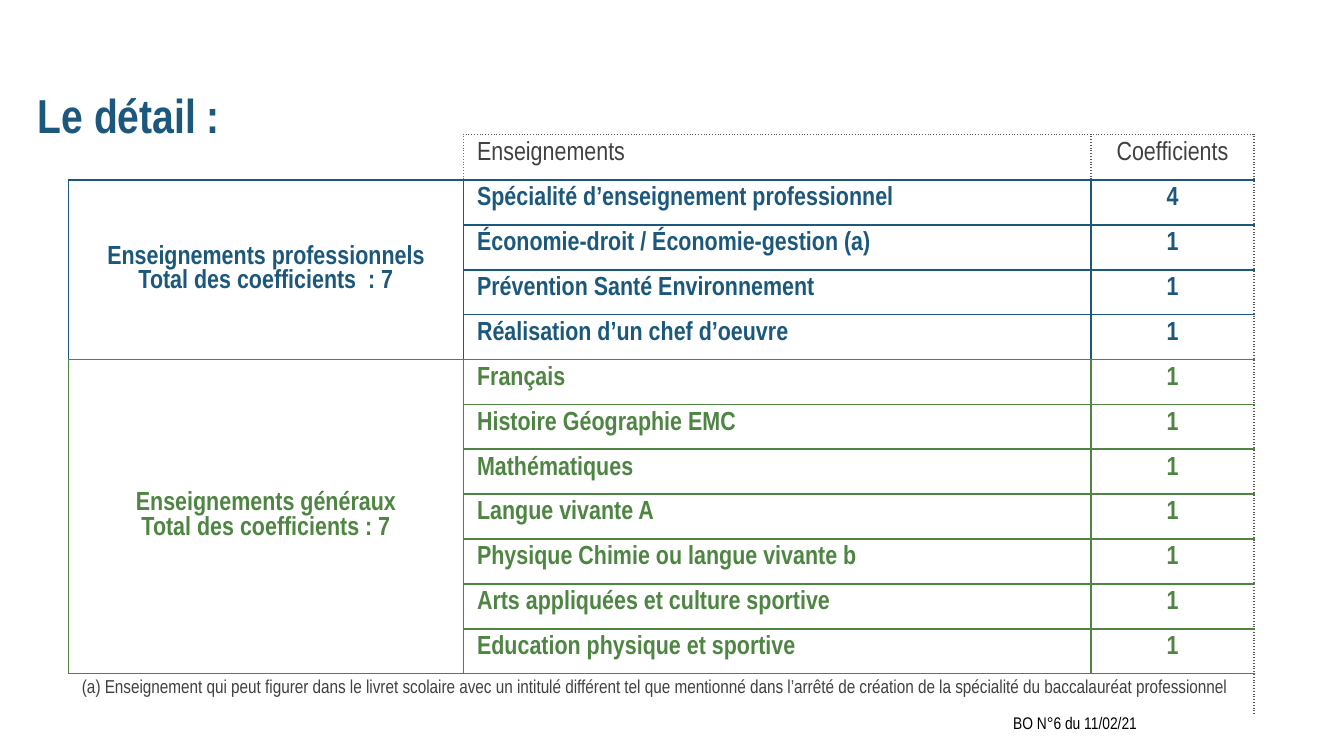
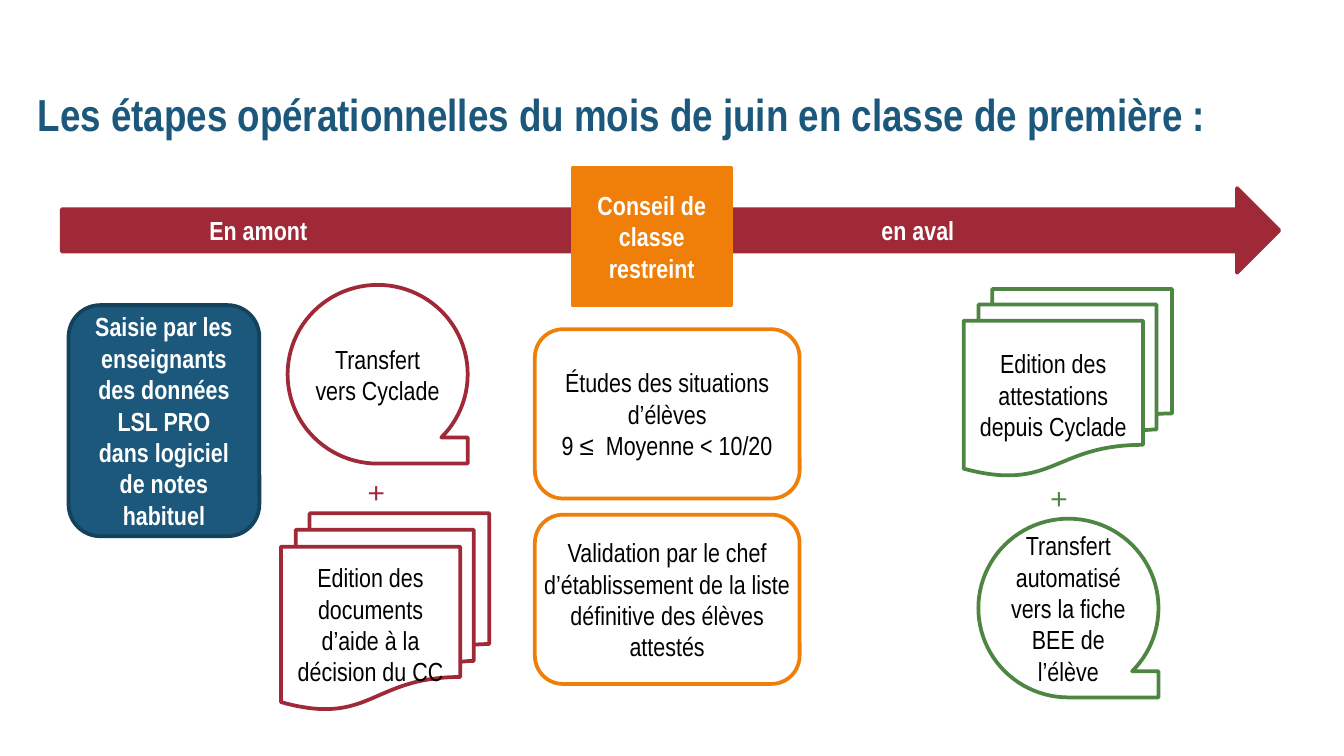
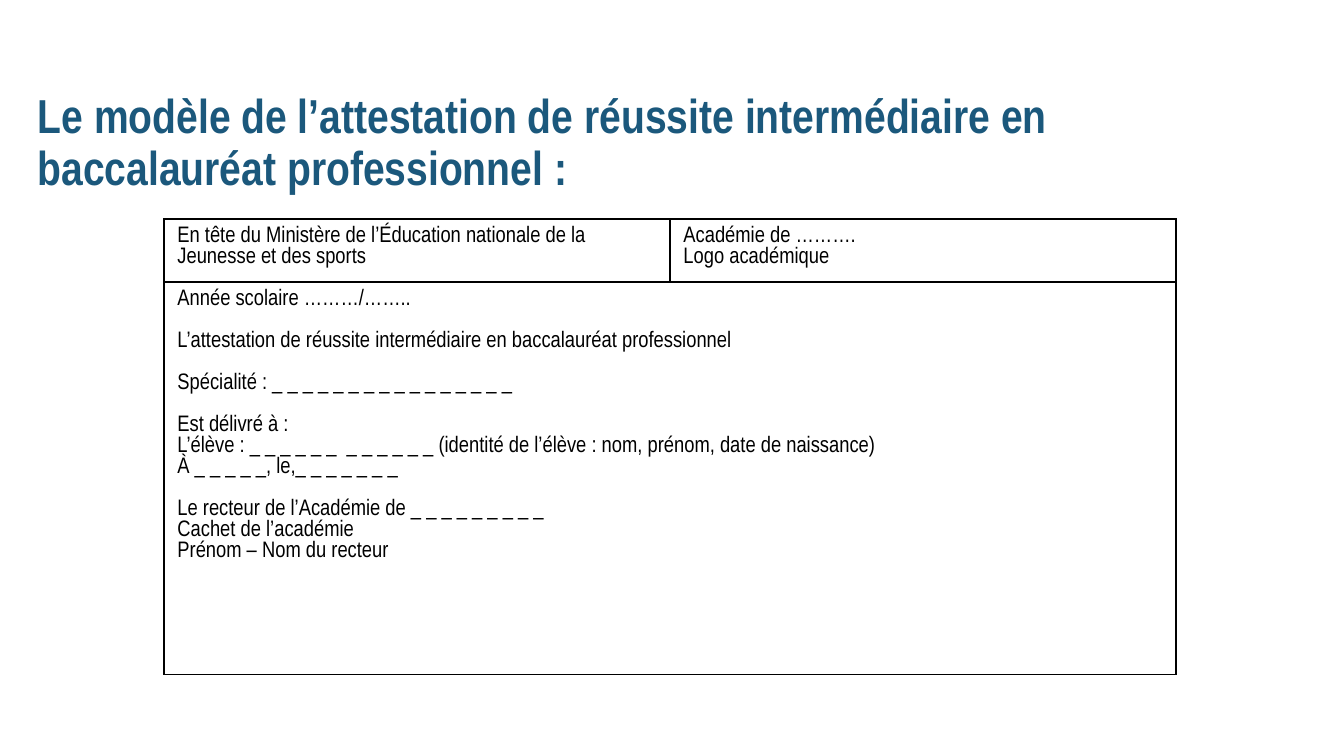
"""Build three slides on the intermediate vocational diploma."""
from dataclasses import dataclass
from typing import NamedTuple

from lxml.etree import SubElement as Sub
from pptx import Presentation
from pptx.dml.color import RGBColor as Rgb
from pptx.enum.shapes import MSO_SHAPE as Kind
from pptx.enum.text import MSO_ANCHOR as Anchor, MSO_AUTO_SIZE as Fit, PP_ALIGN as Align
from pptx.oxml.ns import qn
from pptx.util import Emu, Inches, Pt


@dataclass(frozen=True)
class Theme:
    """Colours, faces and type sizes of the deck."""
    blue: str = "1B587C"
    navy: str = "14415C"
    green: str = "4E8542"
    red: str = "9F2936"
    gold: str = "F07F09"
    dark: str = "404040"
    grey: str = "595959"
    black: str = "000000"
    white: str = "FFFFFF"
    face: str = "Arial Narrow"
    sign: str = "Montserrat"
    head: float = 25.5
    tight: float = 24
    plus: float = 18
    text: float = 14
    form: float = 12
    note: float = 10
    small: float = 9


class Box(NamedTuple):
    """Place on a grid of 100 columns, with square cells."""
    x: float
    y: float
    w: float
    h: float


class Pen(NamedTuple):
    """Colour and dash of a cell border."""
    hue: str
    dash: str = "solid"


T = Theme()
WIDE, HIGH = 100, 56.25
UNIT = Inches(0.1)
HEAD = Box(2.8, 6.9, 92.1, 3.9)
DOT = Pen(T.grey, "sysDot")


@dataclass(frozen=True)
class Step:
    """One shape of the June timeline."""
    kind: Kind
    box: Box
    line: str
    text: list[str]
    fill: str = T.white
    hue: str = T.black
    bold: bool = False
    inset: float | None = None
    align: Align = Align.CENTER
    tabs: tuple[float, ...] = ()


def units(*vals: float) -> list[Emu]:
    """Turn grid cells into lengths."""
    return [Emu(round(v * UNIT)) for v in vals]


def write(frame, lines: list[str], *, size: float = T.text, hue: str = T.black,
          bold: bool = False, face: str = T.face, align: Align = Align.LEFT,
          space: float = 1.0, gaps: tuple[int, ...] = (),
          tabs: tuple[float, ...] = ()) -> None:
    """Fill a text frame, one paragraph a line."""
    for i, line in enumerate(lines):
        par = frame.paragraphs[0] if i == 0 else frame.add_paragraph()
        par.alignment = align
        par.line_spacing = space
        if i in gaps:
            par.space_before = Pt(size * 0.94)
        if tabs:
            stops = Sub(par._p.get_or_add_pPr(), qn("a:tabLst"))
            for stop in tabs:
                Sub(stops, qn("a:tab"), pos=str(units(stop)[0]), algn="l")
        run = par.add_run()
        run.text = line
        font = run.font
        font.name, font.size, font.bold = face, Pt(size), bold
        font.color.rgb = Rgb.from_string(hue)


def pad(frame, inset: float) -> None:
    """Set the four insets of a text frame or cell."""
    frame.margin_left = frame.margin_right = frame.margin_top = frame.margin_bottom = Inches(inset)


def start(deck, text: str, size: float = T.head):
    """Add a slide with its title."""
    slide = deck.slides.add_slide(deck.slide_layouts[5])
    title = slide.shapes.title
    title.left, title.top, title.width, title.height = units(*HEAD)
    frame = title.text_frame
    frame.word_wrap, frame.auto_size = True, Fit.NONE
    frame.vertical_anchor = Anchor.TOP
    pad(frame, 0)
    write(frame, [text], size=size, hue=T.blue, bold=True, space=0.9)
    return slide


def label(slide, box: Box, text: str, **form) -> None:
    """Add a plain text box."""
    frame = slide.shapes.add_textbox(*units(*box)).text_frame
    frame.word_wrap = True
    write(frame, [text], **form)


def draw(slide, step: Step) -> None:
    """Draw one timeline shape."""
    shape = slide.shapes.add_shape(step.kind, *units(*step.box))
    shape.shadow.inherit = False
    shape.fill.solid()
    shape.fill.fore_color.rgb = Rgb.from_string(step.fill)
    shape.line.color.rgb = Rgb.from_string(step.line)
    shape.line.width = Pt(2)
    frame = shape.text_frame
    frame.word_wrap, frame.vertical_anchor = True, Anchor.MIDDLE
    if step.inset is not None:
        pad(frame, step.inset)
    write(frame, step.text, hue=step.hue, bold=step.bold, align=step.align, tabs=step.tabs)


def grid(slide, box: Box, cols: list[float], rows: list[float]):
    """Add a bare table with the given columns and rows."""
    table = slide.shapes.add_table(len(rows), len(cols), *units(*box)).table
    table.first_row = table.horz_banding = False
    for col, wide in zip(table.columns, units(*cols)):
        col.width = wide
    for row, high in zip(table.rows, units(*rows)):
        row.height = high
    return table


def edge(cell, pens: dict[str, Pen]) -> None:
    """Set the borders of a cell and clear its fill."""
    props = cell._tc.get_or_add_tcPr()
    for side in "LRTB":
        line = Sub(props, qn(f"a:ln{side}"), w=str(Pt(1)))
        pen = pens.get(side)
        if pen:
            Sub(Sub(line, qn("a:solidFill")), qn("a:srgbClr"), val=pen.hue)
            Sub(line, qn("a:prstDash"), val=pen.dash)
        else:
            Sub(line, qn("a:noFill"))
    cell.fill.background()


PRO = ["Spécialité d’enseignement professionnel", "Économie-droit / Économie-gestion (a)",
       "Prévention Santé Environnement", "Réalisation d’un chef d’oeuvre"]
CORE = ["Français", "Histoire Géographie EMC", "Mathématiques", "Langue vivante A",
        "Physique Chimie ou langue vivante b", "Arts appliquées et culture sportive",
        "Education physique et sportive"]
LAST = len(PRO + CORE) + 1


def pens_at(row: int, col: int) -> dict[str, Pen]:
    """Give the borders of one cell of the weights table."""
    blue, green = Pen(T.blue), Pen(T.green)
    if row == 0:
        side = Pen(T.green, "sysDot")
        if col == 0:
            return {"R": side, "B": blue}
        return {"L": side if col == 1 else DOT, "T": DOT, "R": DOT, "B": blue}
    if row == LAST:
        return {"T": green, "R": DOT}
    pens = dict.fromkeys("LRTB", blue if row <= len(PRO) else green)
    if row == len(PRO) or col == 0:
        pens["B"] = green
    if col == 2:
        pens["R"] = DOT
    return pens


def detail(deck) -> None:
    """Slide with the weight of each subject."""
    slide = start(deck, "Le détail :")
    label(slide, Box(74.4, 52.5, 22, 2.5), "BO N°6 du 11/02/21", size=T.small)
    box = Box(5.1, 10, 88.2, 43.1)
    top, foot = 3.4, 3
    each = (box.h - top - foot) / (LAST - 1)
    table = grid(slide, box, [29.4, 46.7, 12.1], [top] + [each] * (LAST - 1) + [foot])
    for row in range(LAST + 1):
        for col in range(3):
            edge(table.cell(row, col), pens_at(row, col))
    pad(table.cell(0, 0), 0)

    def put(row: int, col: int, *lines: str, **form) -> None:
        write(table.cell(row, col).text_frame, list(lines), **form)

    put(0, 1, "Enseignements", hue=T.dark)
    put(0, 2, "Coefficients", hue=T.dark, align=Align.CENTER)
    groups = [(1, PRO, T.blue, "Enseignements professionnels", "Total des coefficients  : 7"),
              (1 + len(PRO), CORE, T.green, "Enseignements généraux", "Total des coefficients : 7")]
    for first, names, hue, name, total in groups:
        cell = table.cell(first, 0)
        cell.merge(table.cell(first + len(names) - 1, 0))
        cell.vertical_anchor = Anchor.MIDDLE
        put(first, 0, name, total, hue=hue, bold=True, align=Align.CENTER)
        for row, item in enumerate(names, first):
            put(row, 1, item, hue=hue, bold=True)
            put(row, 2, "4" if row == 1 else "1", hue=hue, bold=True, align=Align.CENTER)
    table.cell(LAST, 0).merge(table.cell(LAST, 2))
    put(LAST, 0, "(a) Enseignement qui peut figurer dans le livret scolaire avec un intitulé "
        "différent tel que mentionné dans l’arrêté de création de la spécialité du "
        "baccalauréat professionnel", size=T.note, hue=T.dark)


STEPS = [
    Step(Kind.RIGHT_ARROW, Box(4.6, 14, 90.6, 6.3), T.red, ["\tEn amont\ten aval"],
         T.red, T.white, True, align=Align.LEFT, tabs=(10, 60)),
    Step(Kind.RECTANGLE, Box(42.6, 12.5, 11.8, 10.2), T.gold,
         ["Conseil de classe restreint"], T.gold, T.white, True),
    Step(Kind.ROUNDED_RECTANGLE, Box(5.1, 22.7, 14.2, 17.2), T.navy,
         ["Saisie par les enseignants des données LSL PRO dans logiciel de notes habituel"],
         T.blue, T.white, True),
    Step(Kind.ROUNDED_RECTANGLE, Box(39.8, 24.5, 19.7, 12.6), T.gold,
         ["Études des situations d’élèves", "9 ≤  Moyenne < 10/20"], inset=0),
    Step(Kind.ROUNDED_RECTANGLE, Box(39.8, 38.3, 19.7, 12.6), T.gold,
         ["Validation par le chef d’établissement de la liste définitive des élèves attestés"],
         inset=0),
    Step(Kind.FLOWCHART_MULTIDOCUMENT, Box(71.7, 21.5, 15.5, 13.9), T.green,
         ["Edition des attestations depuis Cyclade"]),
    Step(Kind.FLOWCHART_SEQUENTIAL_ACCESS_STORAGE, Box(72.8, 38.6, 13.4, 13.3), T.green,
         ["Transfert automatisé vers la fiche BEE de l’élève"], inset=0),
    Step(Kind.FLOWCHART_SEQUENTIAL_ACCESS_STORAGE, Box(21.4, 21.2, 13.4, 13.3), T.red,
         ["Transfert vers Cyclade"], inset=0),
    Step(Kind.FLOWCHART_MULTIDOCUMENT, Box(20.9, 38.2, 15.5, 14.6), T.red,
         ["Edition des documents d’aide à la décision du CC"]),
]


def stages(deck) -> None:
    """Slide with the steps of June."""
    slide = start(deck, "Les étapes opérationnelles du mois de juin en classe de première :", T.tight)
    for step in STEPS:
        draw(slide, step)
    for x, y, hue in [(26.3, 34.6, T.red), (77.1, 35.1, T.green)]:
        label(slide, Box(x, y, 4.7, 4), "+", size=T.plus, hue=hue, face=T.sign)


def model(deck) -> None:
    """Slide with the blank certificate."""
    slide = start(deck, "Le modèle de l’attestation de réussite intermédiaire en "
                        "baccalauréat professionnel :")
    table = grid(slide, Box(12.2, 16.3, 75.3, 33.9), [37.65] * 2, [4.7, 29.2])
    for cell in table.iter_cells():
        edge(cell, dict.fromkeys("LRTB", Pen(T.black)))
    table.cell(1, 0).merge(table.cell(1, 1))
    parts = [
        (0, 0, ["En tête du Ministère de l’Éducation nationale de la Jeunesse et des sports"], ()),
        (0, 1, ["Académie de ……….", "Logo académique"], ()),
        (1, 0, ["Année scolaire ………/……..",
                "L’attestation de réussite intermédiaire en baccalauréat professionnel",
                "Spécialité : _ _ _ _ _ _ _ _ _ _ _ _ _ _ _ _",
                "Est délivré à :",
                "L’élève : _ _ _ _ _ _  _ _ _ _ _ _ (identité de l’élève : nom, prénom, "
                "date de naissance)",
                "À _ _ _ _ _, le,_ _ _ _ _ _ _",
                "Le recteur de l’Académie de _ _ _ _ _ _ _ _ _",
                "Cachet de l’académie",
                "Prénom – Nom du recteur"], (1, 2, 3, 6)),
    ]
    for row, col, lines, gaps in parts:
        write(table.cell(row, col).text_frame, lines, size=T.form, gaps=gaps)


def main() -> None:
    """Build and save the deck."""
    deck = Presentation()
    deck.slide_width, deck.slide_height = units(WIDE, HIGH)
    for build in (detail, stages, model):
        build(deck)
    deck.save("out.pptx")


if __name__ == "__main__":
    main()
